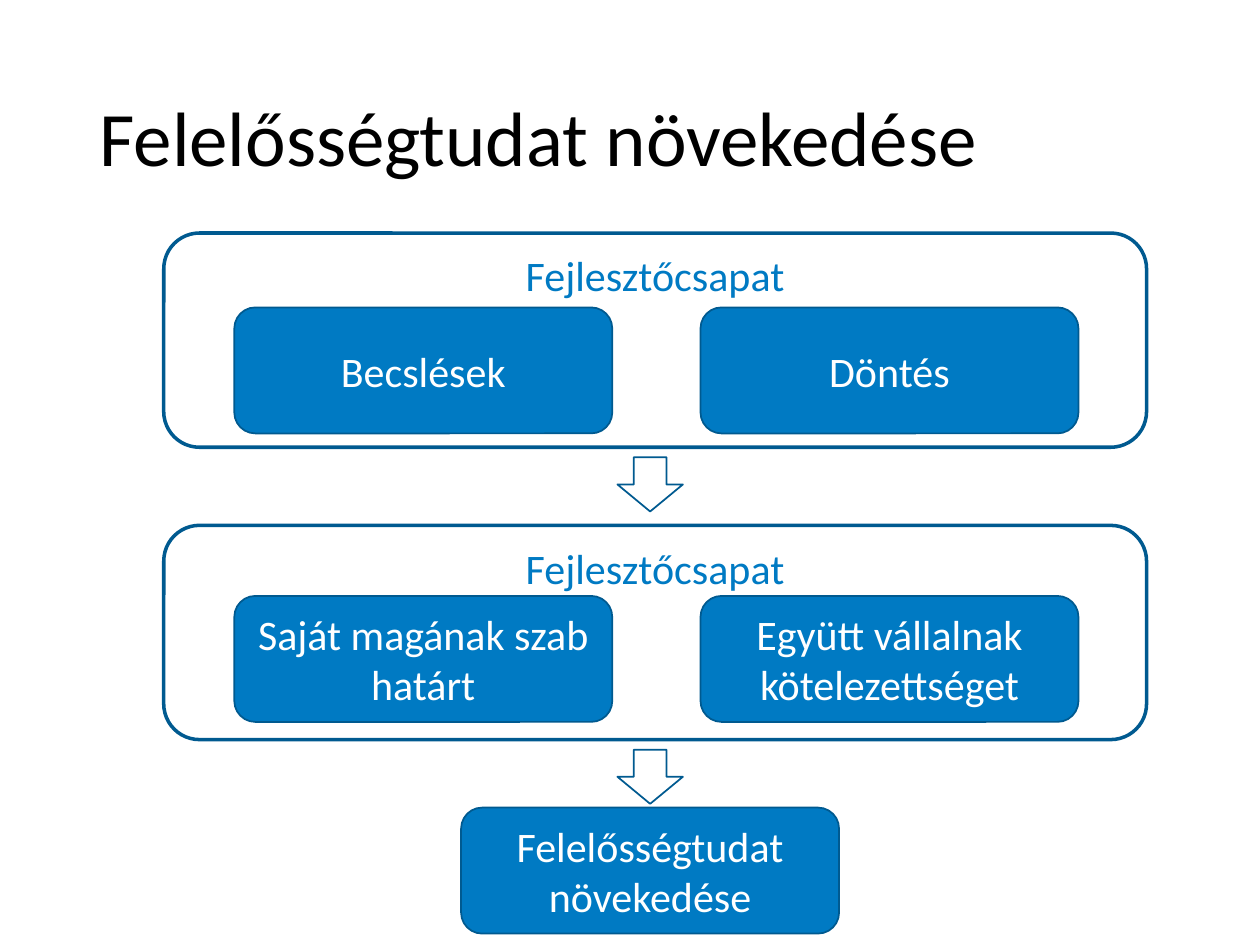
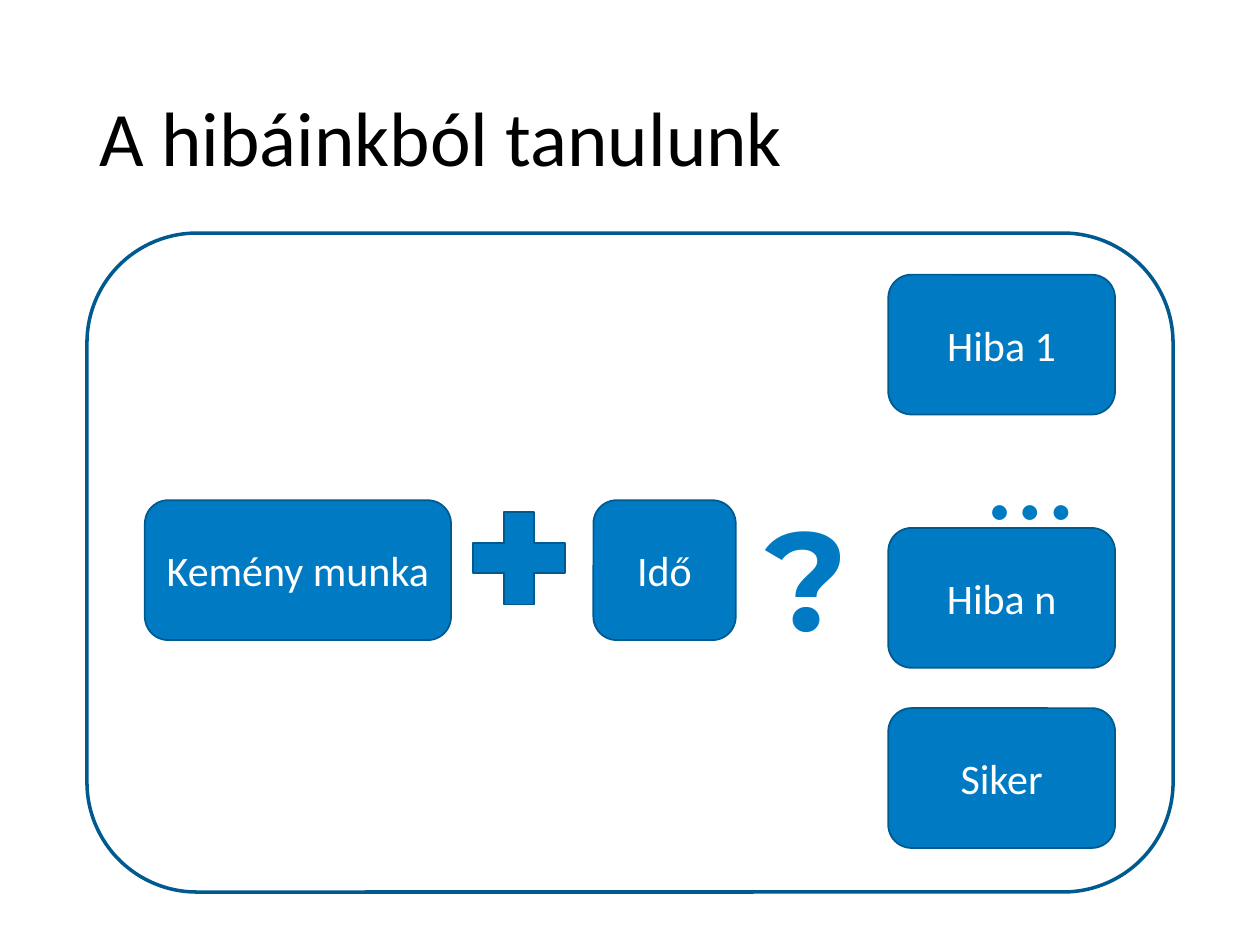
import pptx
import pptx.util
import pptx.dml.color
import pptx.enum.shapes
import pptx.enum.text

SHAPE = pptx.enum.shapes.MSO_SHAPE
ANCHOR = pptx.enum.text.MSO_ANCHOR
ALIGN = pptx.enum.text.PP_ALIGN

prs = pptx.Presentation()
prs.slide_width, prs.slide_height = pptx.util.Inches(10), pptx.util.Inches(7.5)

# Grid of 100 columns by 75 rows, shared by both slides
UNIT = prs.slide_width / 100
BLUE, NAVY, WHITE, BLACK = "007AC3", "005A90", "FFFFFF", "000000"
TITLE_AT = (6.9, 4, 86.2, 14.5)
BODY_TOP = 18.5

# Looks: fill, line colour, line width, text format and anchor
BODY = {"name": "Calibri", "size": pptx.util.Pt(24)}
BOX = dict(fill=BLUE, line=NAVY, font=BODY, color=WHITE)
FRAME = dict(line=NAVY, width=2, font=BODY, color=BLUE, anchor=ANCHOR.TOP)
ARROW = dict(line=NAVY)
DOTS = dict(font={"name": "Calibri", "size": pptx.util.Pt(70)}, color=BLUE)
QUESTION = dict(font={"name": "Montserrat", "size": pptx.util.Pt(80), "bold": True},
                color=BLUE, anchor=ANCHOR.TOP)
TITLE = dict(font={"name": "Calibri", "size": pptx.util.Pt(44)},
             color=BLACK, align=ALIGN.LEFT, spacing=0.9)


def rgb(value):
    return pptx.dml.color.RGBColor.from_string(value)


def put(s, kind, at, text="", fill=None, line=None, width=1, font=None, color=None,
        anchor=ANCHOR.MIDDLE, align=ALIGN.CENTER, spacing=None):
    """Place a title, a text box or a preset shape on the grid."""
    box = [round(n * UNIT) for n in at]
    if kind == "title":
        sp = s.shapes.title
        sp.left, sp.top, sp.width, sp.height = box
    elif kind == "text":
        sp = s.shapes.add_textbox(*box)
    else:
        sp = s.shapes.add_shape(kind, *box)
        sp.shadow.inherit = False
        for part, paint in ((sp.fill, fill), (sp.line.fill, line)):
            if paint:
                part.solid()
                part.fore_color.rgb = rgb(paint)
            else:
                part.background()
        if line:
            sp.line.width = pptx.util.Pt(width)
    if text:
        tf = sp.text_frame
        tf.word_wrap, tf.vertical_anchor = True, anchor
        p = tf.paragraphs[0]
        p.alignment, p.line_spacing = align, spacing
        r = p.add_run()
        r.text = text
        for key, value in font.items():
            setattr(r.font, key, value)
        r.font.color.rgb = rgb(color)
    return sp


# Slide 1: two team frames leading down to the result
s = prs.slides.add_slide(prs.slide_layouts[5])
put(s, "title", TITLE_AT, "Felelősségtudat növekedése", **TITLE)
steps = [
    (BODY_TOP, 24.4, ("Becslések", "Döntés")),
    (41.7, 47.3, ("Saját magának szab határt", "Együtt vállalnak kötelezettséget")),
]
for frame_top, box_top, labels in steps:
    put(s, SHAPE.ROUNDED_RECTANGLE, (13, frame_top, 78, 17), "Fejlesztőcsapat", **FRAME)
    for i, label in enumerate(labels):
        put(s, SHAPE.ROUNDED_RECTANGLE, (18.6 + i * 37, box_top, 30, 10), label, **BOX)
    put(s, SHAPE.DOWN_ARROW, (49, frame_top + 17.8, 5.2, 4.3), **ARROW)
put(s, SHAPE.ROUNDED_RECTANGLE, (36.6, 64.1, 30, 10), "Felelősségtudat növekedése", **BOX)

# Slide 2: work plus time, with its possible outcomes
s = prs.slides.add_slide(prs.slide_layouts[5])
put(s, "title", TITLE_AT, "A hibáinkból tanulunk", **TITLE)
put(s, SHAPE.ROUNDED_RECTANGLE, (6.9, BODY_TOP, 86.2, 52.3), **FRAME)
boxes = [
    (11.5, 39.7, 24.3, "Kemény munka"),
    (47.1, 39.7, 11.3, "Idő"),
    (70.5, 21.8, 18, "Hiba 1"),
    (70.5, 41.9, 18, "Hiba n"),
    (70.5, 56.2, 18, "Siker"),
]
for left, top, width, label in boxes:
    put(s, SHAPE.ROUNDED_RECTANGLE, (left, top, width, 11.1), label, **BOX)

# Signs between the boxes
put(s, SHAPE.ROUNDED_RECTANGLE, (72.8, 31.8, 18, 11.1), "…", **DOTS)
put(s, SHAPE.MATH_PLUS, (36.2, 39.3, 10, 10), **BOX)
sp = put(s, "text", (59.2, 38.5, 9.7, 14.5), "?", **QUESTION)
sp.text_frame.auto_size = pptx.enum.text.MSO_AUTO_SIZE.SHAPE_TO_FIT_TEXT

prs.save("out.pptx")
